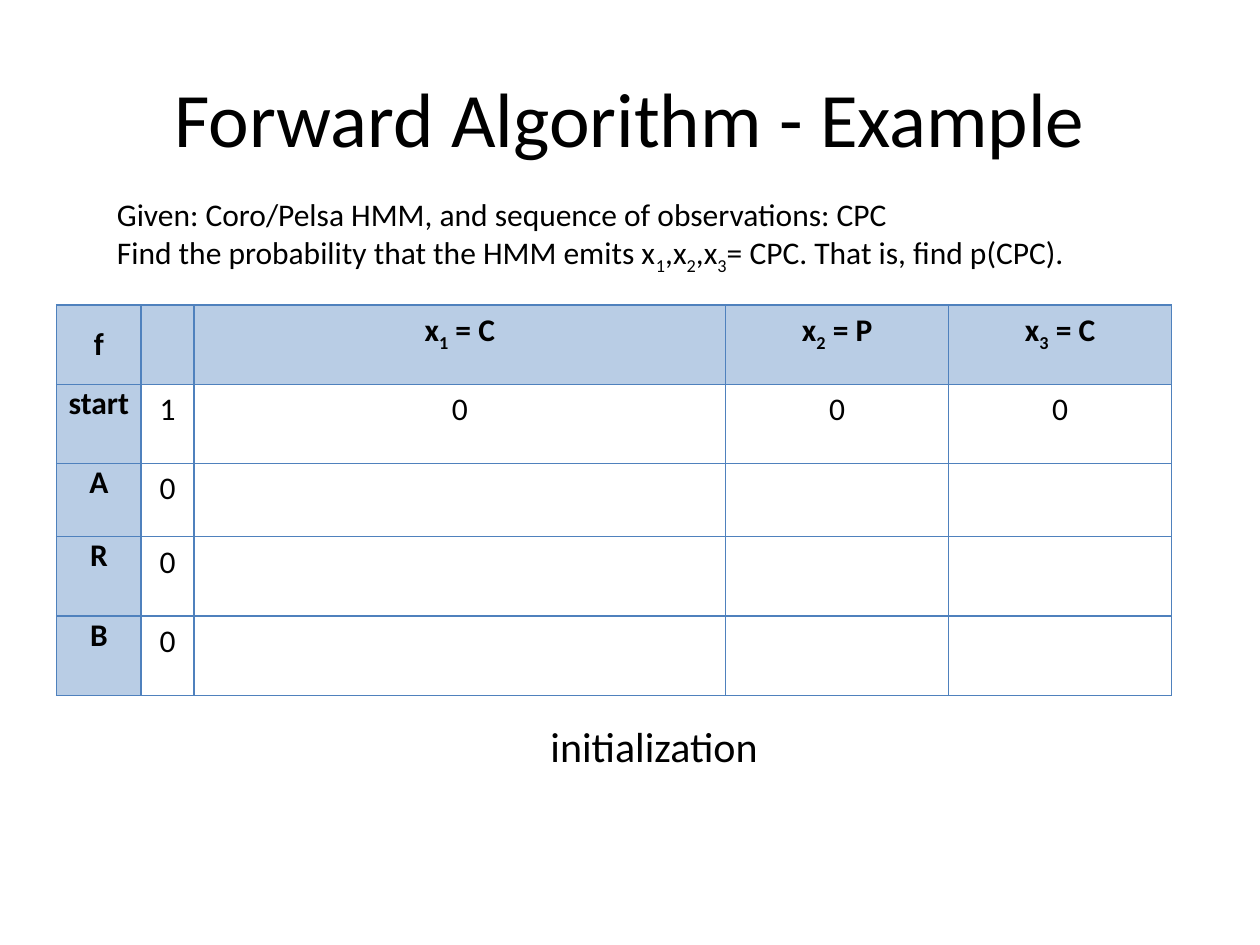
from dataclasses import dataclass

from lxml.etree import SubElement
from pptx import Presentation
from pptx.dml.color import RGBColor
from pptx.enum.text import MSO_ANCHOR, PP_ALIGN
from pptx.oxml.ns import qn
from pptx.util import Inches, Pt

FONT = "Calibri"
INK = "000000"
HEADER_FILL = "B9CDE5"
BODY_FILL = "FFFFFF"
BORDER = "4F81BD"


@dataclass
class TextBlock:
    """Text lines with their place and format."""
    lines: list[str]
    left: float
    top: float
    width: float
    height: float
    size: int
    align: PP_ALIGN = PP_ALIGN.LEFT
    anchor: MSO_ANCHOR = MSO_ANCHOR.TOP
    wrap: bool = False


BLOCKS = [
    TextBlock(["Forward Algorithm - Example"], 0.5, 0.3, 9, 1.25, 44,
              PP_ALIGN.CENTER, MSO_ANCHOR.MIDDLE, True),
    TextBlock(["Given: Coro/Pelsa HMM, and sequence of observations: CPC",
               "Find the probability that the HMM emits x_1,x_2,x_3= CPC. "
               "That is, find p(CPC)."], 0.83, 1.5, 7.9, 0.71, 18),
    TextBlock(["initialization"], 4.27, 5.67, 1.87, 0.5, 24),
]

COLUMN_WIDTHS = [0.67, 0.42, 4.22, 1.77, 1.77]
ROW_HEIGHTS = [0.63, 0.63, 0.58, 0.63, 0.63]
FORWARD_VALUES = [
    ["f", "", "x_1 = C", "x_2 = P", "x_3 = C"],
    ["start", "1", "0", "0", "0"],
    ["A", "0", "", "", ""],
    ["R", "0", "", "", ""],
    ["B", "0", "", "", ""],
]


def color(value: str) -> RGBColor:
    return RGBColor.from_string(value)


def write(para, text: str, *, size: int, bold: bool = False, align=PP_ALIGN.LEFT) -> None:
    """Write text into a paragraph, lowering the character after each underscore."""
    para.alignment = align
    para.font.size = Pt(size)

    def add_span(part: str, lowered: bool = False) -> None:
        if not part:
            return
        span = para.add_run()
        span.text = part
        span.font.name = FONT
        span.font.size = Pt(size)
        span.font.bold = bold
        span.font.color.rgb = color(INK)
        if lowered:
            span.font._element.set("baseline", "-25000")

    first, *rest = text.split("_")
    add_span(first)
    for part in rest:
        add_span(part[0], lowered=True)
        add_span(part[1:])


def add_block(page, block: TextBlock) -> None:
    box = page.shapes.add_textbox(Inches(block.left), Inches(block.top),
                                  Inches(block.width), Inches(block.height))
    frame = box.text_frame
    frame.word_wrap = block.wrap
    frame.vertical_anchor = block.anchor
    for index, line in enumerate(block.lines):
        para = frame.add_paragraph() if index else frame.paragraphs[0]
        write(para, line, size=block.size, align=block.align)


def add_borders(cell) -> None:
    properties = cell._tc.get_or_add_tcPr()
    for index, side in enumerate(("lnL", "lnR", "lnT", "lnB")):
        line = properties.makeelement(qn(f"a:{side}"), {"w": str(Pt(1))})
        fill = SubElement(line, qn("a:solidFill"))
        SubElement(fill, qn("a:srgbClr"), val=BORDER)
        properties.insert(index, line)


def format_cell(cell, text: str, row: int, column: int) -> None:
    is_header = row == 0 or column == 0
    cell.fill.solid()
    cell.fill.fore_color.rgb = color(HEADER_FILL if is_header else BODY_FILL)
    add_borders(cell)
    if column == 0:
        cell.margin_left = cell.margin_right = cell.margin_top = cell.margin_bottom = 0
    if row == column == 0:
        cell.vertical_anchor = MSO_ANCHOR.MIDDLE
    write(cell.text_frame.paragraphs[0], text, size=18, bold=is_header,
          align=PP_ALIGN.CENTER)


def add_forward_table(page) -> None:
    frame = page.shapes.add_table(len(ROW_HEIGHTS), len(COLUMN_WIDTHS),
                                  Inches(0.45), Inches(2.42),
                                  Inches(sum(COLUMN_WIDTHS)), Inches(sum(ROW_HEIGHTS)))
    table = frame.table
    table.first_row = table.horz_banding = False
    for column, width in zip(table.columns, COLUMN_WIDTHS):
        column.width = Inches(width)
    for row, height in zip(table.rows, ROW_HEIGHTS):
        row.height = Inches(height)
    for row, values in enumerate(FORWARD_VALUES):
        for column, text in enumerate(values):
            format_cell(table.cell(row, column), text, row, column)


def main() -> None:
    deck = Presentation()
    deck.slide_width, deck.slide_height = Inches(10), Inches(7.5)
    page = deck.slides.add_slide(deck.slide_layouts[6])
    title, *captions = BLOCKS
    add_block(page, title)
    add_forward_table(page)
    for caption in captions:
        add_block(page, caption)
    deck.save("out.pptx")


if __name__ == "__main__":
    main()
